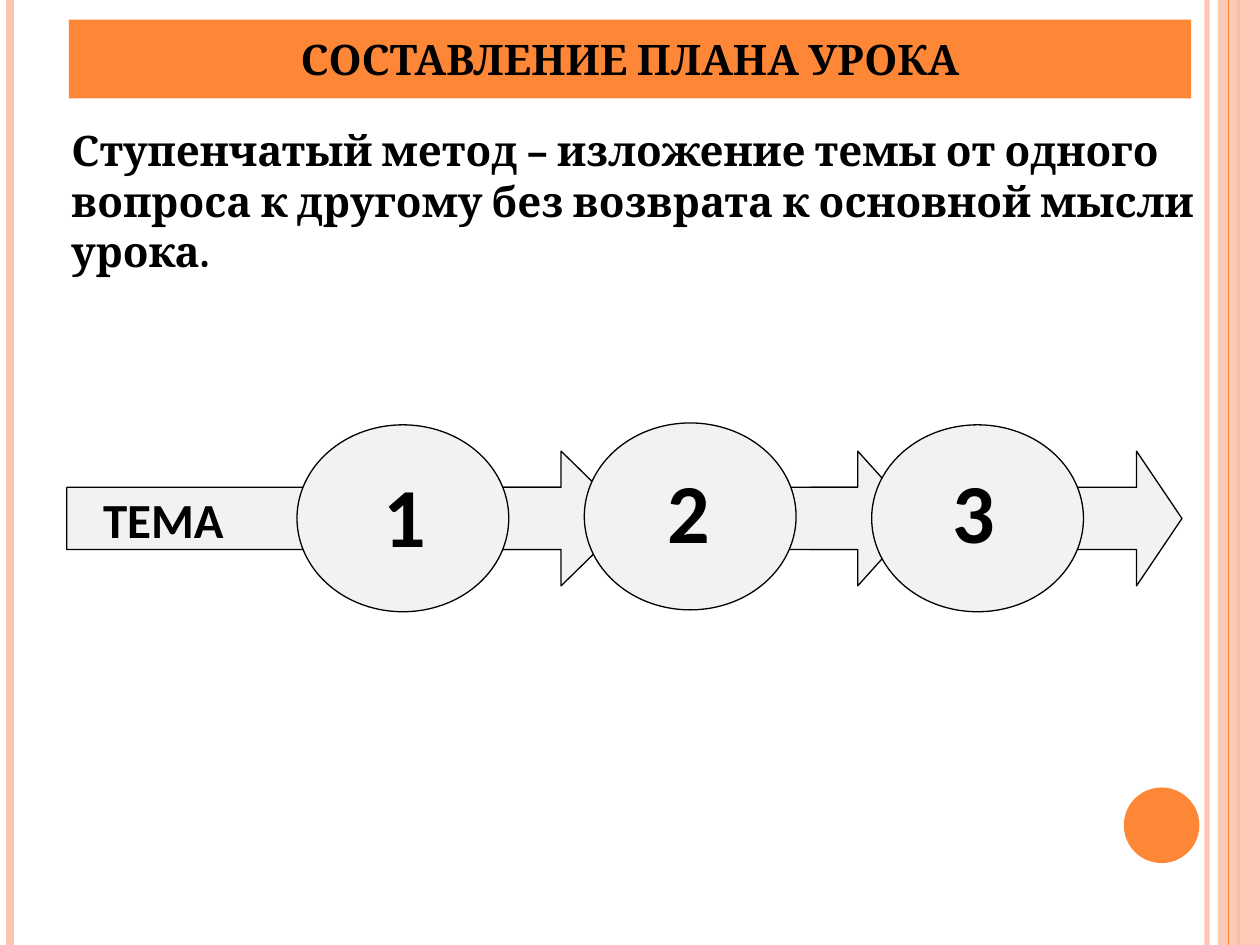
from lxml import etree
from pptx import Presentation
from pptx.dml.color import RGBColor
from pptx.enum.shapes import MSO_CONNECTOR, MSO_SHAPE
from pptx.enum.text import MSO_ANCHOR, MSO_AUTO_SIZE, PP_ALIGN
from pptx.oxml.ns import qn
from pptx.util import Pt

RECT, OVAL, ARROW = MSO_SHAPE.RECTANGLE, MSO_SHAPE.OVAL, MSO_SHAPE.RIGHT_ARROW
STRAIGHT = MSO_CONNECTOR.STRAIGHT
TOP, MIDDLE = MSO_ANCHOR.TOP, MSO_ANCHOR.MIDDLE
LEFT, CENTER = PP_ALIGN.LEFT, PP_ALIGN.CENTER
GROW = MSO_AUTO_SIZE.SHAPE_TO_FIT_TEXT

COLORS = {"orange": "FE8637", "peach": "FEC3AE", "gray": "F2F2F2", "black": "000000"}
HEADING = {"name": "Cambria", "size": Pt(24), "bold": True}
TOPIC = {"name": "Calibri", "size": Pt(28), "bold": True}
NUMBER = {"name": "Calibri", "size": Pt(48), "bold": True}

WIDTH, HEIGHT = 720, 540


def rgb(name):
    return RGBColor.from_string(COLORS[name])


def set_alpha(fill, percent):
    """Make a solid fill partly transparent; fill is its a:solidFill parent."""
    clr = fill.find(qn("a:solidFill")).find(qn("a:srgbClr"))
    etree.SubElement(clr, qn("a:alpha")).set("val", str(percent * 1000))


def add_stripe(shapes, x, color, weight, alpha=None):
    """Vertical line over the full slide height."""
    cx = shapes.add_connector(STRAIGHT, Pt(x), 0, Pt(x), Pt(HEIGHT))
    cx.line.color.rgb = rgb(color)
    cx.line.width = Pt(weight)
    sp_pr = cx._element.spPr
    if alpha:
        set_alpha(sp_pr.find(qn("a:ln")), alpha)
    etree.SubElement(sp_pr, qn("a:effectLst"))


def add_block(shapes, kind, box, fill, outline=None, adj=()):
    sp = shapes.add_shape(kind, *map(Pt, box))
    sp.shadow.inherit = False
    sp.fill.solid()
    sp.fill.fore_color.rgb = rgb(fill)
    if outline:
        sp.line.color.rgb = rgb(outline)
        sp.line.width = Pt(0.75)
    else:
        sp.line.fill.background()
    for i, value in enumerate(adj):
        sp.adjustments[i] = value
    return sp


def write(sp, text, font, align=LEFT, anchor=MIDDLE):
    tf = sp.text_frame
    tf.word_wrap = True
    tf.vertical_anchor = anchor
    p = tf.paragraphs[0]
    p.alignment = align
    r = p.add_run()
    r.text = text
    for name, value in font.items():
        setattr(r.font, name, value)
    r.font.color.rgb = rgb("black")


def add_label(shapes, box, text, font, align=LEFT, anchor=MIDDLE):
    sp = shapes.add_textbox(*map(Pt, box))
    write(sp, text, font, align, anchor)
    return sp


def add_frame(shapes):
    """Side stripes and the corner dot."""
    add_stripe(shapes, 689.8, "peach", 3, 93)
    add_stripe(shapes, 5.8, "peach", 4.5)
    add_stripe(shapes, 707.8, "orange", 1.5)
    band = add_block(shapes, RECT, (696, 0, WIDTH - 696, HEIGHT), "peach")
    set_alpha(band._element.spPr, 87)
    add_stripe(shapes, 702, "orange", 0.75)
    add_block(shapes, OVAL, (642.2, 450, 43.2, 43.2), "orange")


def add_steps(shapes):
    """Chain of arrows with numbered circles."""
    for x, w, head in ((463, 212.4, 0.337), (241.2, 283.7, 0.451), (38.2, 321.8, 0.511)):
        add_block(shapes, ARROW, (x, 257.8, w, 77), "gray", "black", (0.462, head))
    for i, y in enumerate((242.8, 241.7, 242.8)):
        add_block(shapes, OVAL, (169.7 + 164.2 * i, y, 121, 106.8), "gray", "black")
    add_label(shapes, (38.2, 276.5, 110.2, 40.3), "ТЕМА", TOPIC, CENTER)
    for i, y in enumerate((253.4, 251.3, 251.3)):
        add_label(shapes, (212.2 + 162.4 * i, y, 45.4, 80.6), str(i + 1), NUMBER)


def main():
    prs = Presentation()
    prs.slide_width, prs.slide_height = Pt(WIDTH), Pt(HEIGHT)
    s = prs.slides.add_slide(prs.slide_layouts[6])

    add_frame(s.shapes)

    # Title and definition
    title = add_block(s.shapes, RECT, (39.4, 11.3, 641.3, 45), "orange")
    write(title, "СОСТАВЛЕНИЕ ПЛАНА УРОКА", HEADING, CENTER)
    body = add_label(
        s.shapes, (33.8, 67.7, 658.1, 94.3),
        "Ступенчатый метод – изложение темы от одного вопроса к другому "
        "без возврата к основной мысли урока.", HEADING, anchor=TOP)
    body.text_frame.auto_size = GROW

    # Step diagram
    add_steps(s.shapes.add_group_shape().shapes)

    prs.save("out.pptx")


if __name__ == "__main__":
    main()
